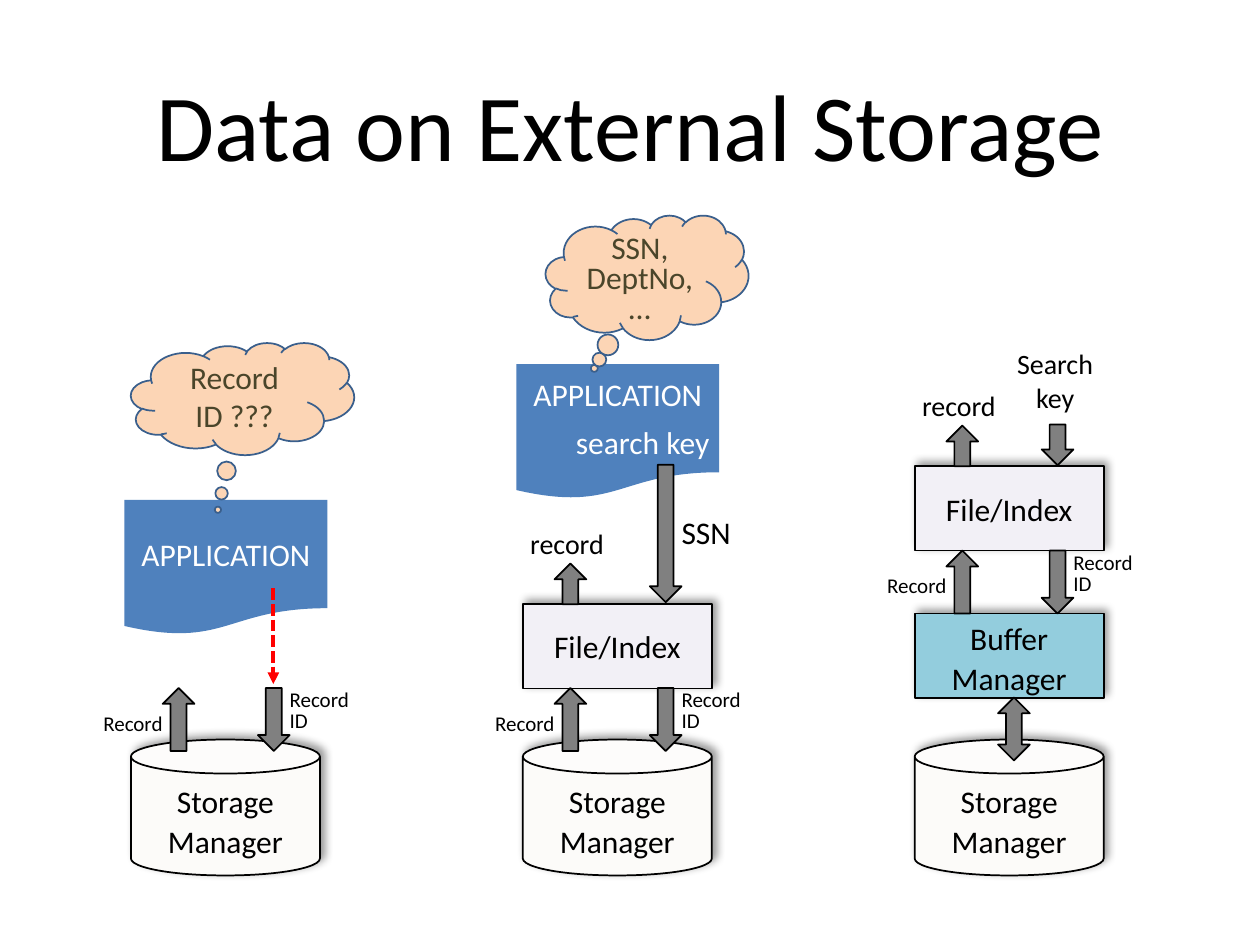
from dataclasses import dataclass

from lxml.etree import SubElement
from pptx import Presentation
from pptx.dml.color import RGBColor
from pptx.enum.dml import MSO_LINE_DASH_STYLE as DASH
from pptx.enum.shapes import MSO_CONNECTOR, MSO_SHAPE as SHAPE
from pptx.enum.text import MSO_ANCHOR as ANCHOR, PP_ALIGN as ALIGN
from pptx.oxml.ns import qn
from pptx.util import Cm, Pt


@dataclass(frozen=True)
class Theme:
    font: str = "Calibri"
    title: int = 54
    body: int = 18
    label: int = 16
    small: int = 12
    ink: str = "000000"
    white: str = "FFFFFF"
    storage: str = "FCFBF9"
    file_index: str = "F2F0F6"
    buffer: str = "93CDDD"
    arrow: str = "808080"
    application: str = "4F81BD"
    thought: str = "FCD5B5"
    thought_line: str = "3A5F8C"
    thought_text: str = "4A452A"
    request: str = "FF0000"


theme = Theme()


def write(shape, lines, size, color=theme.ink, align=ALIGN.CENTER, spacing=None):
    """Write each line as one paragraph; spacing is in points."""
    for number, line in enumerate(lines):
        frame = shape.text_frame
        paragraph = frame.add_paragraph() if number else frame.paragraphs[0]
        paragraph.alignment = align
        if spacing:
            paragraph.line_spacing = Pt(spacing)
        run = paragraph.add_run()
        run.text = line
        run.font.name = theme.font
        run.font.size = Pt(size)
        run.font.color.rgb = RGBColor.from_string(color)


def add_block(kind, box, fill=None, line=theme.ink, shadow=False, margins=None, anchor=ANCHOR.MIDDLE):
    """Add a preset shape, or an unwrapped text box when kind is None; box is in cm."""
    place = [Cm(value) for value in box]
    if kind is None:
        block = slide.shapes.add_textbox(*place)
        block.text_frame.word_wrap = False
        return block
    block = slide.shapes.add_shape(kind, *place)
    block.shadow.inherit = False
    block.fill.solid()
    block.fill.fore_color.rgb = RGBColor.from_string(fill)
    if line:
        block.line.color.rgb = RGBColor.from_string(line)
        block.line.width = Pt(1)
    else:
        block.line.fill.background()
    if shadow:
        effects = block._element.spPr.find(qn("a:effectLst"))
        outer = SubElement(effects, qn("a:outerShdw"), blurRad=str(Pt(5)),
                           dist=str(Pt(3)), dir="18900000", rotWithShape="0")
        black = SubElement(outer, qn("a:srgbClr"), val=theme.ink)
        SubElement(black, qn("a:alpha"), val="40000")
    frame = block.text_frame
    frame.word_wrap = True
    frame.vertical_anchor = anchor
    if margins:
        (frame.margin_left, frame.margin_top,
         frame.margin_right, frame.margin_bottom) = [Cm(value) for value in margins]
    return block


deck = Presentation()
deck.slide_width, deck.slide_height = Cm(25.4), Cm(19.05)
slide = deck.slides.add_slide(deck.slide_layouts[5])

# Title
title = slide.shapes.title
title.left, title.top, title.width, title.height = Cm(1.27), Cm(0.91), Cm(22.86), Cm(3.18)
title.text_frame.vertical_anchor = ANCHOR.MIDDLE
write(title, ["Data on External Storage"], theme.title)

# Shared grid: three columns, each with an upward and a downward lane
first, second, third = [2.64 + 7.9 * column for column in range(3)]
block_width, block_height = 3.81, 1.7
up_lane, down_lane, arrow_width = 0.64, 2.56, 0.64
exchange_height, exit_height = 1.27, 0.82
exchange_top, index_top, upper_index_top = 13.87, 12.18, 9.4
buffer_top = upper_index_top + block_height + exchange_height
edge = (0.13, 0.13, 0.13, 0.13)

# Applications
app_size, app_margins = (4.09, 2.72), (0, 0.13, 0, 0.13)
application = add_block(SHAPE.FLOWCHART_DOCUMENT, (first - 0.13, 10.08, *app_size),
                        theme.application, None, margins=app_margins)
write(application, ["APPLICATION"], theme.body, theme.white)
search_app = add_block(SHAPE.FLOWCHART_DOCUMENT, (second - 0.13, 7.34, *app_size),
                       theme.application, None, margins=app_margins)
write(search_app, ["APPLICATION", "search key"], theme.body, theme.white)
heading, search_key = search_app.text_frame.paragraphs
heading.space_after = Pt(6)
search_key._p.get_or_add_pPr().set("marL", str(Cm(1)))

# Storage managers
for left in (first, second, third):
    storage = add_block(SHAPE.CAN, (left, 14.91, block_width, 2.74), theme.storage,
                        shadow=True, anchor=ANCHOR.TOP)
    storage.adjustments[0] = 0.25
    write(storage, ["Storage Manager"], theme.body, spacing=23)

# Buffer manager
buffer = add_block(SHAPE.RECTANGLE, (third, buffer_top, block_width, block_height),
                   theme.buffer, shadow=True, margins=(0.13, 0.13, 0.13, 0.08))
write(buffer, ["Buffer Manager"], theme.body, spacing=23)
add_block(SHAPE.UP_DOWN_ARROW, (third + 1.68, 14.06, arrow_width, exchange_height), theme.arrow)

# File/Index blocks, each returning a record upwards
for left, top in ((second, index_top), (third, upper_index_top)):
    index = add_block(SHAPE.RECTANGLE, (left, top, block_width, block_height),
                      theme.file_index, shadow=True, margins=edge)
    write(index, ["File/Index"], theme.body)
    add_block(SHAPE.UP_ARROW, (left + up_lane, top - exit_height, arrow_width, exit_height), theme.arrow)
    record = add_block(None, (left - 0.1, top - 1.7, 2.03, 0.94))
    write(record, ["record"], theme.label, align=ALIGN.LEFT)

# Record and record ID exchanges
for left, top in ((first, exchange_top), (second, exchange_top), (third, upper_index_top + block_height)):
    for kind, lane in ((SHAPE.UP_ARROW, up_lane), (SHAPE.DOWN_ARROW, down_lane)):
        add_block(kind, (left + lane, top, arrow_width, exchange_height), theme.arrow)
    record = add_block(None, (left - 0.84, top + 0.41, 1.73, 0.69))
    write(record, ["Record"], theme.small, align=ALIGN.RIGHT, spacing=12)
    record_id = add_block(None, (left + 2.95, top - 0.07, 1.73, 1.12))
    write(record_id, ["Record", "ID"], theme.small, align=ALIGN.LEFT, spacing=12)

# Search keys entering the File/Index blocks
add_block(SHAPE.DOWN_ARROW, (second + down_lane, 9.37, arrow_width, 2.77), theme.arrow)
ssn = add_block(None, (second + 2.95, 10.21, 1.52, 1.02))
write(ssn, ["SSN"], theme.body, align=ALIGN.LEFT)
add_block(SHAPE.DOWN_ARROW, (third + down_lane, 8.56, arrow_width, exit_height), theme.arrow)
key_label = add_block(None, (third + 1.8, 6.86, 2.06, 1.63))
write(key_label, ["Search", "key"], theme.label)

# Dashed request from the first application
request = slide.shapes.add_connector(MSO_CONNECTOR.STRAIGHT, Cm(5.51), Cm(11.86), Cm(5.51), Cm(13.79))
request.line.color.rgb = RGBColor.from_string(theme.request)
request.line.width = Pt(2.25)
request.line.dash_style = DASH.SQUARE_DOT
SubElement(request.line._get_or_add_ln(), qn("a:tailEnd"), type="triangle")
SubElement(request._element.spPr, qn("a:effectLst"))

# Thought clouds
clouds = (
    ((first, 6.91, 4.5, 2.26), (-0.11, 0.99), "Record ID ???", None, None),
    ((second + 0.46, 4.34, 4.09, 2.51), (-0.26, 0.73), "SSN, DeptNo, …", 17, (0.25, 0.25, 0.25, 0)),
)
for box, tip, words, spacing, margins in clouds:
    cloud = add_block(SHAPE.CLOUD_CALLOUT, box, theme.thought, theme.thought_line, margins=margins)
    cloud.adjustments[0], cloud.adjustments[1] = tip
    write(cloud, [words], theme.body, theme.thought_text, spacing=spacing)

deck.save("out.pptx")
